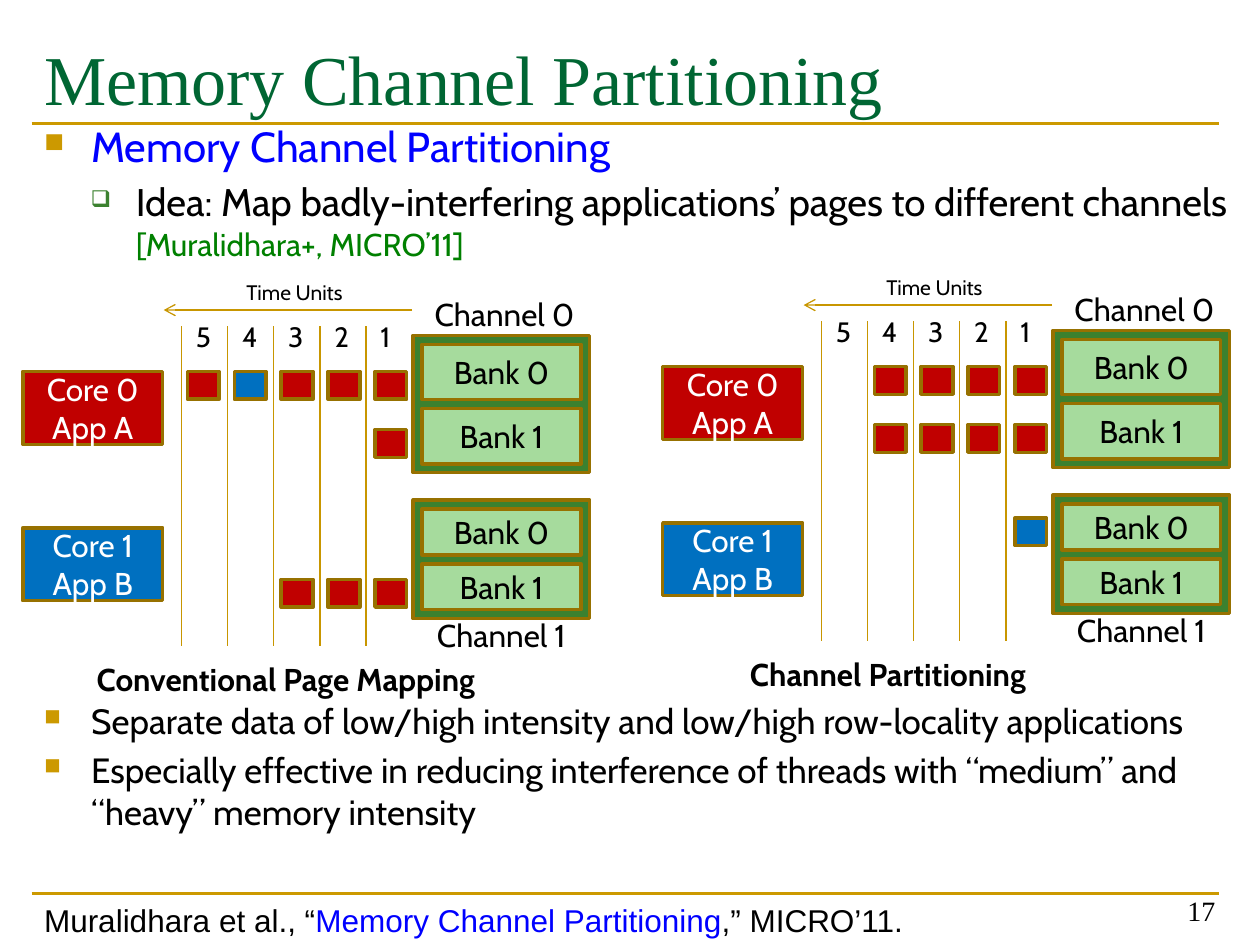
from lxml.etree import SubElement
from pptx import Presentation
from pptx.dml.color import RGBColor
from pptx.enum.shapes import MSO_CONNECTOR as CONN, MSO_SHAPE as SHAPE
from pptx.enum.text import MSO_ANCHOR as ANCHOR, PP_ALIGN as ALIGN
from pptx.oxml.ns import qn
from pptx.util import Cm, Pt

GOLD, RULE, EDGE = "CC9900", "C89600", "977100"
GREEN, LIGHT_GREEN = "3B812F", "A6DB9D"
BLACK, WHITE, BLUE = "000000", "FFFFFF", "0000FF"
APP_COLORS = {"A": "C00000", "B": "0070C0"}
COLUMNS = 5


def color(value):
    return RGBColor.from_string(value)


def write(p, text, size=18, font="Cabin", fill=BLACK, bold=False):
    r = p.add_run()
    r.text = text
    r.font.size = Pt(size)
    r.font.name = font
    r.font.bold = bold
    r.font.color.rgb = color(fill)


def add_text(s, x, y, w, h, text="", align=ALIGN.LEFT, anchor=ANCHOR.TOP, **fmt):
    tf = s.shapes.add_textbox(Cm(x), Cm(y), Cm(w), Cm(h)).text_frame
    tf.word_wrap = True
    tf.vertical_anchor = anchor
    tf.paragraphs[0].alignment = align
    if text:
        write(tf.paragraphs[0], text, **fmt)
    return tf


def add_box(s, x, y, w, h, fill, lines=(), text_color=BLACK):
    sp = s.shapes.add_shape(SHAPE.RECTANGLE, Cm(x), Cm(y), Cm(w), Cm(h))
    sp.shadow.inherit = False
    sp.fill.solid()
    sp.fill.fore_color.rgb = color(fill)
    sp.line.color.rgb = color(EDGE)
    sp.line.width = Pt(2)
    tf = sp.text_frame
    tf.vertical_anchor = ANCHOR.MIDDLE
    for i, line in enumerate(lines):
        p = tf.add_paragraph() if i else tf.paragraphs[0]
        p.alignment = ALIGN.CENTER
        write(p, line, fill=text_color)


def add_line(s, x1, y1, x2, y2, stroke=RULE, width=0.75, arrow=False):
    c = s.shapes.add_connector(CONN.STRAIGHT, Cm(x1), Cm(y1), Cm(x2), Cm(y2))
    c.line.color.rgb = color(stroke)
    c.line.width = Pt(width)
    if arrow:
        SubElement(c.line._get_or_add_ln(), qn("a:tailEnd"), type="arrow")
    SubElement(c._element.spPr, qn("a:effectLst"))


def set_bullet(p, char, fill, percent, left, hanging):
    pPr = p._p.get_or_add_pPr()
    pPr.set("marL", str(Cm(left)))
    pPr.set("indent", str(-Cm(hanging)))
    clr = SubElement(pPr, qn("a:buClr"))
    SubElement(clr, qn("a:srgbClr"), val=fill)
    SubElement(pPr, qn("a:buSzPct"), val=str(percent * 1000))
    SubElement(pPr, qn("a:buChar"), char=char)


def add_bullets(s, x, y, w, h, items):
    tf = add_text(s, x, y, w, h)
    for i, (level, runs) in enumerate(items):
        p = tf.add_paragraph() if i else tf.paragraphs[0]
        if i:
            p.space_before = Pt(4.2)
        if level:
            set_bullet(p, "❑", GREEN, 60, 1.85, 0.91)
        else:
            set_bullet(p, "■", GOLD, 65, 0.95, 0.95)
        for text, size, fill in runs:
            write(p, text, size=size, fill=fill)


def add_channel(s, x, y, w, h):
    pad = 0.18
    bank_h = (h - 3 * pad) / 2
    add_box(s, x, y, w, h, GREEN)
    for i in range(2):
        add_box(s, x + pad, y + pad + i * (bank_h + pad), w - 2 * pad, bank_h,
                LIGHT_GREEN, [f"Bank {i}"])


def add_mapping(s, x, y, caption, caption_x, requests):
    for i, (app, fill) in enumerate(APP_COLORS.items()):
        add_box(s, x, y + 1.95 + i * 3.15, 2.82, 1.47, fill,
                [f"Core {i}", f"App {app}"], WHITE)
    add_channel(s, x + 7.87, y + 1.22, 3.56, 2.77)
    add_channel(s, x + 7.87, y + 4.54, 3.56, 2.39)
    add_text(s, x + 8.05, y + 0.28, 3.38, 1.02, "Channel 0")
    add_text(s, x + 8.1, y + 6.75, 3.38, 1.02, "Channel 1")

    add_text(s, x + 4.26, y - 0.03, 3.81, 0.76, "Time Units", size=12)
    add_line(s, x + 7.85, y + 0.71, x + 2.84, y + 0.71, arrow=True)
    for i in range(COLUMNS):
        line_x = x + 3.2 + i * 0.93
        add_line(s, line_x, y + 1.04, line_x, y + 7.49)
        add_text(s, line_x + 0.04, y + 0.78, 0.81, 0.94, str(COLUMNS - i), size=16)
    for row_y, apps in requests:
        for i, app in enumerate(apps):
            add_box(s, x + 7.1 - i * 0.945, y + row_y, 0.64, 0.56, APP_COLORS[app])
    add_text(s, x + caption_x, y + 7.64, 9.6, 1.02, caption, bold=True)


def add_frame(s, x, y, w, h):
    add_line(s, x, y + 1.9, x + w, y + 1.9, GOLD, 1.5)
    add_line(s, x, y + h - 1.04, x + w, y + h - 1.04, GOLD, 1.5)
    add_text(s, x, y, w, 1.8, "Memory Channel Partitioning",
             size=40, font="Times New Roman", fill="006633")
    add_text(s, x + w - 5.74, y + h - 1.5, 5.92, 1.27, "17", align=ALIGN.RIGHT,
             anchor=ANCHOR.BOTTOM, size=16, font="Times New Roman")
    tf = add_text(s, x, y + h - 1.02, 22.43, 1.02)
    for text, fill in (("Muralidhara et al., “", BLACK),
                       ("Memory Channel Partitioning", BLUE),
                       (",” MICRO’11.", BLACK)):
        write(tf.paragraphs[0], text, font="Arial", fill=fill)


def main():
    prs = Presentation()
    prs.slide_width, prs.slide_height = Cm(25.4), Cm(19.05)
    s = prs.slides.add_slide(prs.slide_layouts[6])
    add_frame(s, 0.64, 0.59, 23.93, 18.46)
    add_bullets(s, 0.64, 2.31, 24.76, 3.2, [
        (0, [("Memory Channel Partitioning", 24, BLUE)]),
        (1, [("Idea: Map badly-interfering applications’ pages to different channels ",
              22, BLACK),
             ("[Muralidhara+, MICRO’11]", 18, "008000")]),
    ])
    add_mapping(s, 0.46, 5.54, "Conventional Page Mapping", 1.24,
                [(1.95, "AAABA"), (3.12, "A"), (6.14, "AAA")])
    add_mapping(s, 13.36, 5.44, "Channel Partitioning", 1.51,
                [(1.95, "AAAA"), (3.12, "AAAA"), (5, "B")])
    add_bullets(s, 0.64, 13.97, 24.76, 3, [
        (0, [("Separate data of low/high intensity and low/high row-locality applications",
              20, BLACK)]),
        (0, [("Especially effective in reducing interference of threads with “medium” "
              "and “heavy” memory intensity", 20, BLACK)]),
    ])
    prs.save("out.pptx")


if __name__ == "__main__":
    main()
